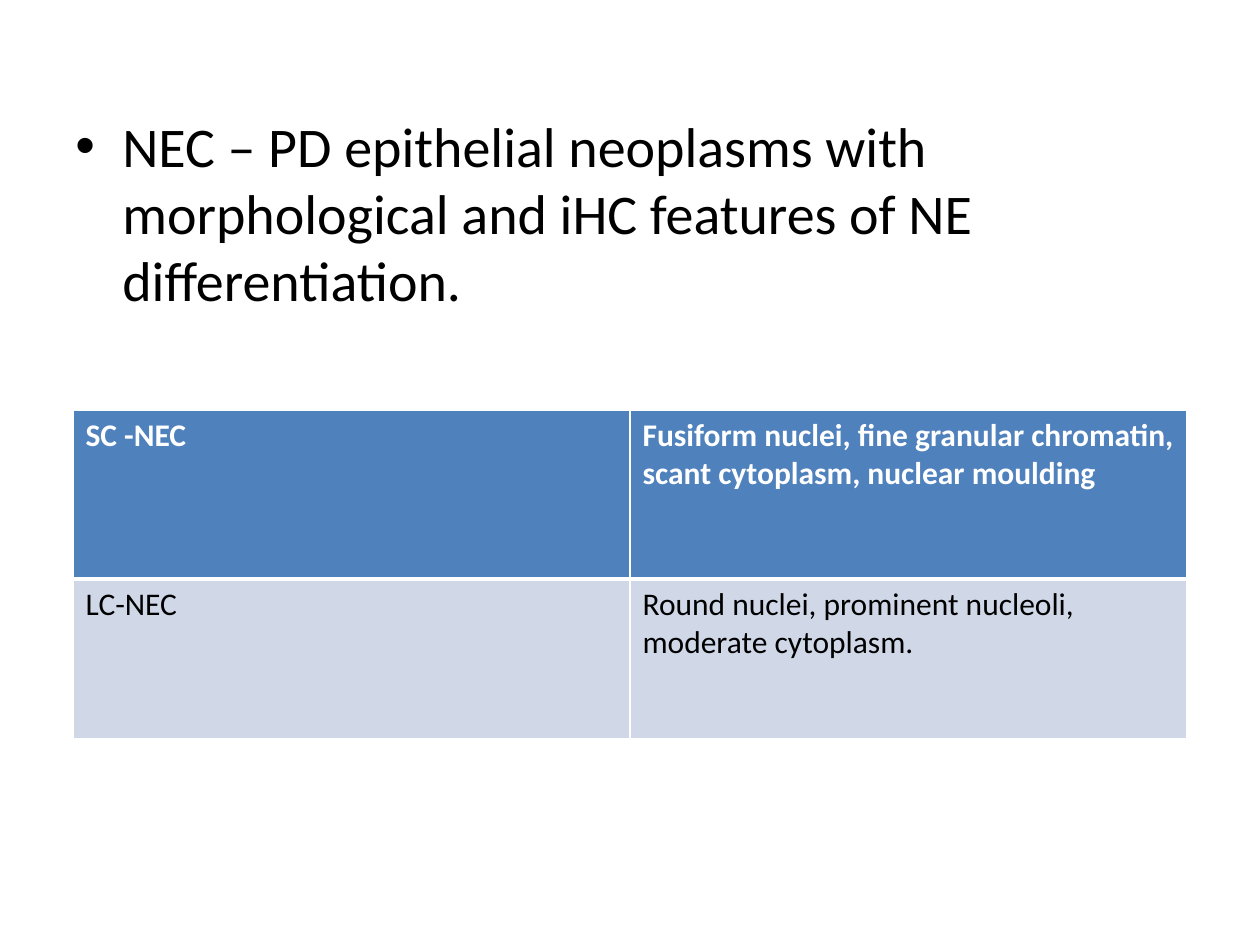
from dataclasses import dataclass

from lxml import etree
from pptx import Presentation
from pptx.dml.color import RGBColor
from pptx.oxml.ns import qn
from pptx.util import Emu, Pt

PX_PER_INCH = 126


@dataclass(frozen=True)
class Theme:
    font: str = "Calibri"
    text: str = "000000"
    header_text: str = "FFFFFF"
    header_fill: str = "4F81BD"
    body_fill: str = "D0D8E8"
    border: str = "FFFFFF"
    bullet_size: int = 32
    table_size: int = 18


THEME = Theme()

DEFINITION = (
    "NEC – PD epithelial neoplasms with morphological and iHC features "
    "of NE differentiation."
)
SUBTYPES = [
    ("SC -NEC", "Fusiform nuclei, fine granular chromatin, scant cytoplasm, nuclear moulding"),
    ("LC-NEC", "Round nuclei, prominent nucleoli, moderate cytoplasm."),
]
ROW_HEIGHTS = [169, 160]
COLUMN_WIDTH = 557


def px(length):
    return Emu(round(length * 914400 / PX_PER_INCH))


def style_text(paragraph, size, color, bold=False):
    for run in paragraph.runs:
        run.font.name = THEME.font
        run.font.size = Pt(size)
        run.font.bold = bold
        run.font.color.rgb = RGBColor.from_string(color)


def add_bullet(slide, text, left, top, width, height):
    frame = slide.shapes.add_textbox(px(left), px(top), px(width), px(height)).text_frame
    frame.word_wrap = True
    paragraph = frame.paragraphs[0]
    paragraph.text = text
    paragraph.space_before = Pt(6.4)
    style_text(paragraph, THEME.bullet_size, THEME.text)

    indent = px(47)
    properties = paragraph._p.get_or_add_pPr()
    properties.set("marL", str(indent))
    properties.set("indent", str(-indent))
    etree.SubElement(properties, qn("a:buFont"), typeface="Arial")
    etree.SubElement(properties, qn("a:buChar"), char="•")


def set_borders(cell, widths):
    """Draw cell borders; widths maps L, R, T and B to points."""
    properties = cell._tc.get_or_add_tcPr()
    for position, (side, width) in enumerate(widths.items()):
        line = etree.Element(qn(f"a:ln{side}"), w=str(Pt(width)))
        fill = etree.SubElement(line, qn("a:solidFill"))
        etree.SubElement(fill, qn("a:srgbClr"), val=THEME.border)
        properties.insert(position, line)


def add_subtype_table(slide, left, top):
    columns = len(SUBTYPES[0])
    table = slide.shapes.add_table(
        len(SUBTYPES), columns, px(left), px(top),
        px(COLUMN_WIDTH * columns), px(sum(ROW_HEIGHTS)),
    ).table
    for column in table.columns:
        column.width = px(COLUMN_WIDTH)

    for row_index, (subtype, height) in enumerate(zip(SUBTYPES, ROW_HEIGHTS)):
        table.rows[row_index].height = px(height)
        is_header = row_index == 0
        fill = THEME.header_fill if is_header else THEME.body_fill
        color = THEME.header_text if is_header else THEME.text
        borders = {"L": 1, "R": 1, "T": 1 if is_header else 3, "B": 3 if is_header else 1}
        for column_index, text in enumerate(subtype):
            cell = table.cell(row_index, column_index)
            cell.text_frame.text = text
            style_text(cell.text_frame.paragraphs[0], THEME.table_size, color, is_header)
            cell.fill.solid()
            cell.fill.fore_color.rgb = RGBColor.from_string(fill)
            set_borders(cell, borders)


def main():
    presentation = Presentation()
    presentation.slide_width = px(1260)
    presentation.slide_height = px(945)
    slide = presentation.slides.add_slide(presentation.slide_layouts[6])
    add_bullet(slide, DEFINITION, left=63, top=105, width=1134, height=740)
    add_subtype_table(slide, left=73, top=410)
    presentation.save("out.pptx")


if __name__ == "__main__":
    main()
